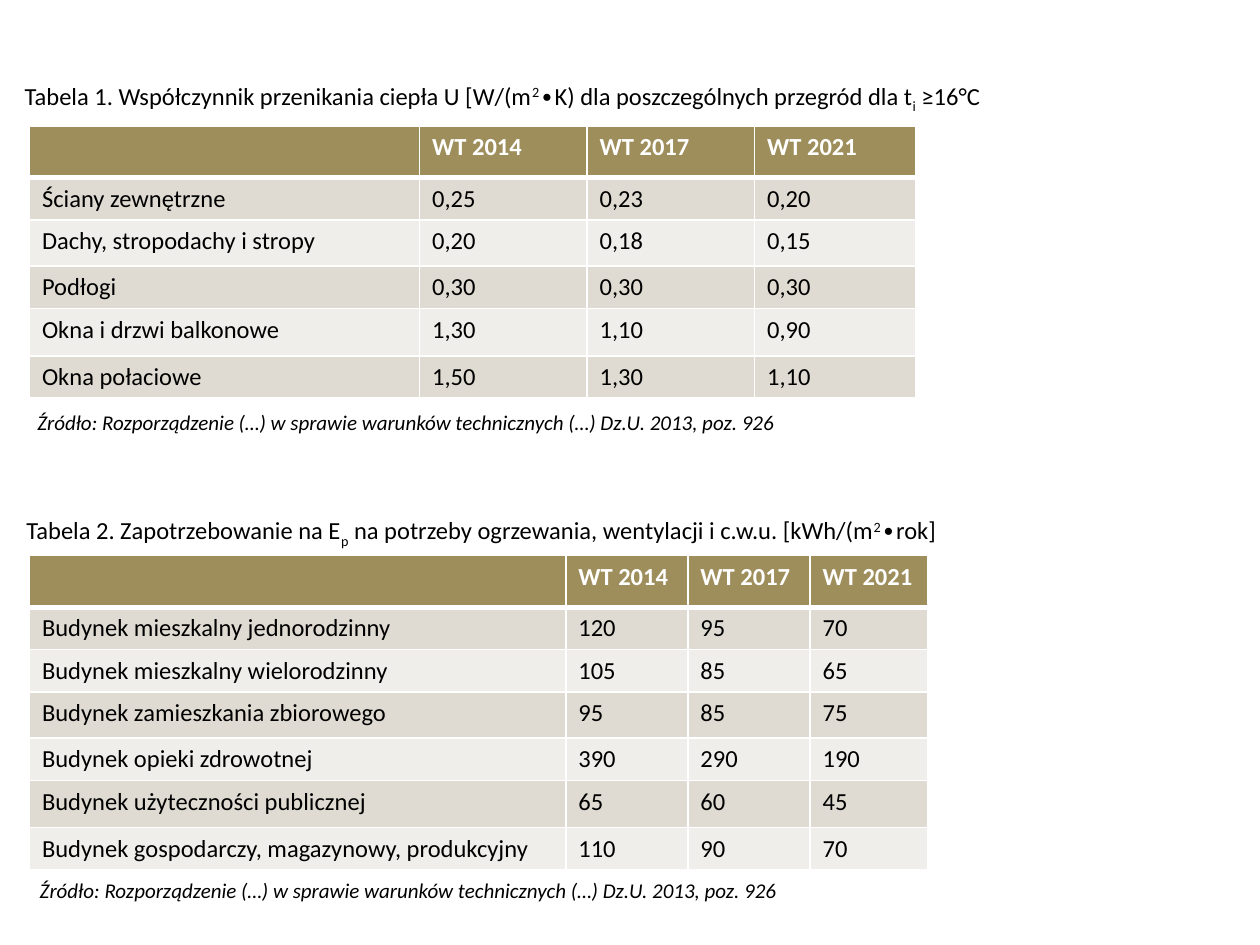
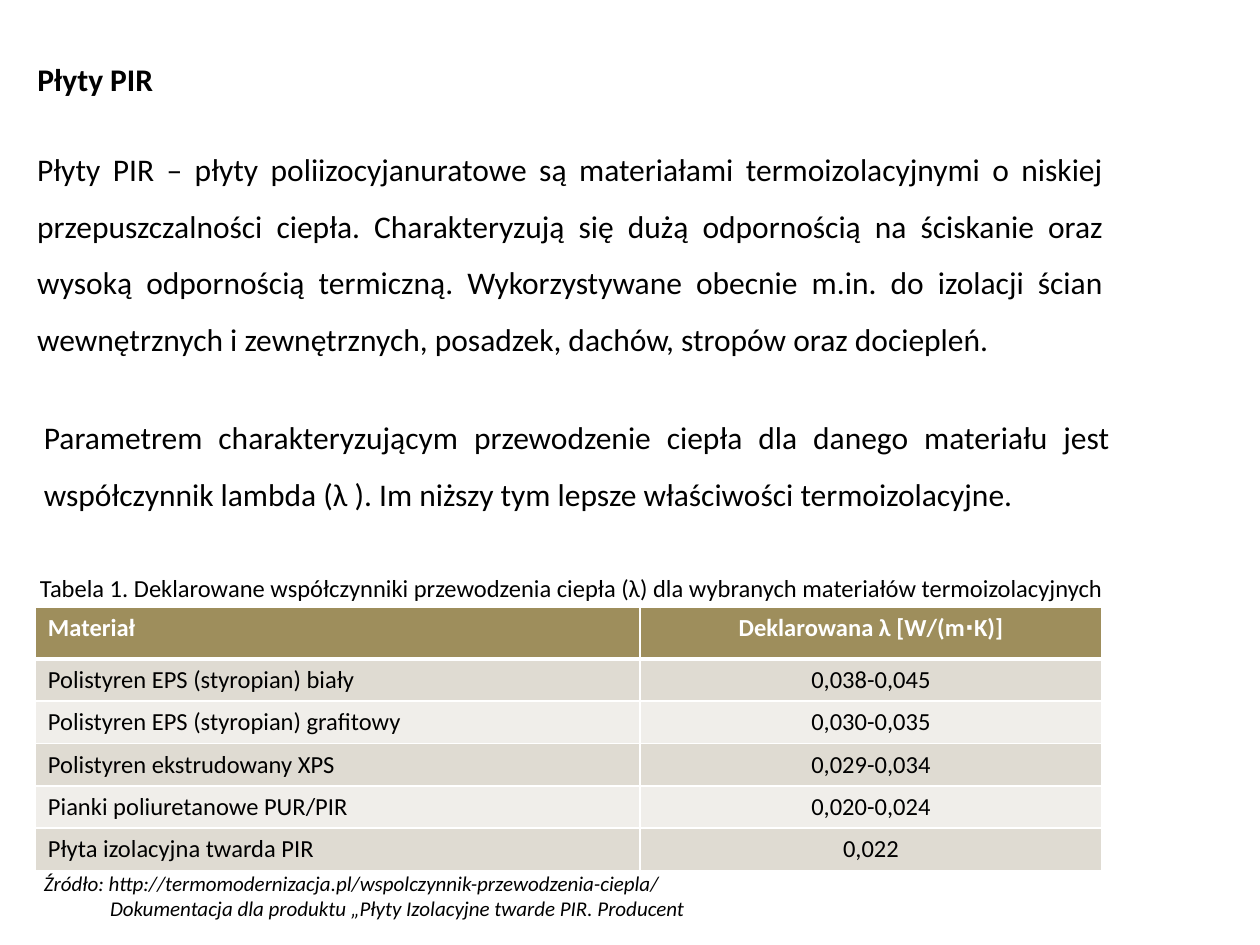
import dataclasses

import lxml.etree
import pptx
import pptx.dml.color
import pptx.enum.text
import pptx.oxml.ns
import pptx.util

Pt = pptx.util.Pt
ALIGN = pptx.enum.text.PP_ALIGN
SUPERSCRIPT, SUBSCRIPT = 30, -25


@dataclasses.dataclass(frozen=True)
class Theme:
    font: str = "Calibri"
    text: str = "000000"
    paper: str = "FFFFFF"
    header: str = "9E8E5C"
    bands: tuple = ("DFDBD2", "F0EEEA")
    body_size: int = 18
    table_size: int = 14
    source_size: int = 12
    header_height: float = 29.5
    row_height: float = 24.2
    grid_line: float = 1
    header_line: float = 3


def color(code):
    return pptx.dml.color.RGBColor.from_string(code)


def write(paragraph, content, *, font, size, ink, bold=False, italic=False,
          align=None, line_spacing=None, indent=0):
    """Fill a paragraph from a string or a list of (text, baseline) pairs."""
    if indent:
        paragraph._p.get_or_add_pPr().set("marL", str(Pt(indent)))
    if align is not None:
        paragraph.alignment = align
    if line_spacing is not None:
        paragraph.line_spacing = line_spacing
    pieces = [(content, 0)] if isinstance(content, str) else content
    for text, baseline in pieces:
        if not text:
            continue
        run = paragraph.add_run()
        run.text = text
        run.font.name = font
        run.font.size = Pt(size)
        run.font.bold = bold
        run.font.italic = italic
        run.font.color.rgb = color(ink)
        if baseline:
            run._r.get_or_add_rPr().set("baseline", str(baseline * 1000))


def set_borders(cell, ink, widths):
    """Draw cell edges; widths maps the edge letters L, R, T, B to points."""
    properties = cell._tc.get_or_add_tcPr()
    qn = pptx.oxml.ns.qn
    for index, (edge, width) in enumerate(widths.items()):
        line = lxml.etree.Element(qn(f"a:ln{edge}"), w=str(Pt(width)))
        fill = lxml.etree.SubElement(line, qn("a:solidFill"))
        lxml.etree.SubElement(fill, qn("a:srgbClr"), val=ink)
        properties.insert(index, line)


class Deck:
    def __init__(self, theme):
        self.theme = theme
        self.presentation = pptx.Presentation()
        self.presentation.slide_width = Pt(720)
        self.presentation.slide_height = Pt(540)
        self.slide = None

    def new_slide(self):
        self.slide = self.presentation.slides.add_slide(
            self.presentation.slide_layouts[6])
        self.slide.background.fill.solid()
        self.slide.background.fill.fore_color.rgb = color(self.theme.paper)

    def text(self, left, top, width, height, *paragraphs, wrap=True,
             last_indent=0, **style):
        box = self.slide.shapes.add_textbox(
            Pt(left), Pt(top), Pt(width), Pt(height))
        frame = box.text_frame
        frame.word_wrap = wrap
        frame.auto_size = pptx.enum.text.MSO_AUTO_SIZE.SHAPE_TO_FIT_TEXT
        for index, content in enumerate(paragraphs):
            paragraph = frame.add_paragraph() if index else frame.paragraphs[0]
            write(paragraph, content, font=self.theme.font, ink=self.theme.text,
                  indent=last_indent if index else 0, **style)

    def heading(self, left, top, width, content):
        self.text(left, top, width, 29, content, wrap=False,
                  size=self.theme.body_size, bold=True)

    def body(self, left, top, height, content):
        self.text(left, top, 623.5, height, content, size=self.theme.body_size,
                  align=ALIGN.JUSTIFY, line_spacing=1.5)

    def caption(self, left, top, width, content):
        self.text(left, top, width, 24.5, content, size=self.theme.table_size)

    def source(self, left, top, height, *lines, last_indent=0):
        self.text(left, top, 516, height, *lines, last_indent=last_indent,
                  size=self.theme.source_size, italic=True)

    def table(self, left, top, column_widths, rows, tall_rows=None,
              value_align=None):
        """Add a banded table; tall_rows maps a row index to its height."""
        theme = self.theme
        heights = [theme.header_height] + [theme.row_height] * (len(rows) - 1)
        for index, height in (tall_rows or {}).items():
            heights[index] = height
        table = self.slide.shapes.add_table(
            len(rows), len(column_widths), Pt(left), Pt(top),
            Pt(sum(column_widths)), Pt(sum(heights))).table
        table.first_row = table.horz_banding = False
        for column, width in zip(table.columns, column_widths):
            column.width = Pt(width)
        for row_index, values in enumerate(rows):
            table.rows[row_index].height = Pt(heights[row_index])
            is_header = row_index == 0
            for column_index, value in enumerate(values):
                cell = table.cell(row_index, column_index)
                cell.fill.solid()
                cell.fill.fore_color.rgb = color(
                    theme.header if is_header else theme.bands[(row_index - 1) % 2])
                top_line = theme.header_line if row_index == 1 else theme.grid_line
                bottom_line = theme.header_line if is_header else theme.grid_line
                set_borders(cell, theme.paper, {
                    "L": theme.grid_line, "R": theme.grid_line,
                    "T": top_line, "B": bottom_line})
                write(cell.text_frame.paragraphs[0], value, font=theme.font,
                      size=theme.table_size, bold=is_header,
                      ink=theme.paper if is_header else theme.text,
                      align=value_align if column_index else None)


YEARS = ("", "WT 2014", "WT 2017", "WT 2021")
REGULATION = ("Źródło: Rozporządzenie (…) w sprawie warunków technicznych (…) "
              "Dz.U. 2013, poz. 926")


def add_requirements_slide(deck):
    deck.new_slide()
    deck.caption(7, 42.5, 585, [
        ("Tabela 1. Współczynnik przenikania ciepła U [W/(m", 0),
        ("2", SUPERSCRIPT), ("∙K) dla poszczególnych przegród dla t", 0),
        ("i", SUBSCRIPT), (" ≥16°C", 0)])
    deck.table(16.8, 72, (223, 95.7, 95.7, 92), [
        YEARS,
        ("Ściany zewnętrzne", "0,25", "0,23", "0,20"),
        ("Dachy, stropodachy i stropy", "0,20", "0,18", "0,15"),
        ("Podłogi", "0,30", "0,30", "0,30"),
        ("Okna i drzwi balkonowe", "1,30", "1,10", "0,90"),
        ("Okna połaciowe", "1,50", "1,30", "1,10"),
    ], tall_rows={2: 26.5, 4: 27})
    deck.source(14.2, 230.5, 21.8, REGULATION)

    deck.caption(8, 291, 712, [
        ("Tabela 2. Zapotrzebowanie na E", 0), ("p", SUBSCRIPT),
        (" na potrzeby ogrzewania, wentylacji i c.w.u. [kWh/(m", 0),
        ("2", SUPERSCRIPT), ("∙rok]", 0)])
    deck.table(16.8, 317.5, (306.5, 69.8, 69.8, 67.5), [
        YEARS,
        ("Budynek mieszkalny jednorodzinny", "120", "95", "70"),
        ("Budynek mieszkalny wielorodzinny", "105", "85", "65"),
        ("Budynek zamieszkania zbiorowego", "95", "85", "75"),
        ("Budynek opieki zdrowotnej", "390", "290", "190"),
        ("Budynek użyteczności publicznej", "65", "60", "45"),
        ("Budynek gospodarczy, magazynowy, produkcyjny", "110", "90", "70"),
    ], tall_rows={3: 26.5, 5: 27})
    deck.source(15.6, 498, 21.8, REGULATION)


def add_pir_boards_slide(deck):
    deck.new_slide()
    deck.heading(14.2, 31, 81.5, "Płyty PIR")
    deck.body(14.2, 71.3, 138, (
        "Płyty PIR – płyty poliizocyjanuratowe są materiałami termoizolacyjnymi "
        "o niskiej przepuszczalności ciepła. Charakteryzują się dużą odpornością "
        "na ściskanie oraz wysoką odpornością termiczną. Wykorzystywane obecnie "
        "m.in. do izolacji ścian wewnętrznych i zewnętrznych, posadzek, dachów, "
        "stropów oraz dociepleń."))
    deck.body(18, 224.6, 69, (
        "Parametrem charakteryzującym przewodzenie ciepła dla danego materiału "
        "jest współczynnik lambda (λ ). Im niższy tym lepsze właściwości "
        "termoizolacyjne."))
    deck.caption(15.8, 324, 623.5, (
        "Tabela 1. Deklarowane współczynniki przewodzenia ciepła (λ) "
        "dla wybranych materiałów termoizolacyjnych"))
    deck.table(20.2, 347, (345.5, 264), [
        ("Materiał", "Deklarowana λ [W/(m∙K)]"),
        ("Polistyren EPS (styropian) biały", "0,038-0,045"),
        ("Polistyren EPS (styropian) grafitowy", "0,030-0,035"),
        ("Polistyren ekstrudowany XPS", "0,029-0,034"),
        ("Pianki poliuretanowe PUR/PIR", "0,020-0,024"),
        ("Płyta izolacyjna twarda PIR", "0,022"),
    ], value_align=ALIGN.CENTER)
    deck.source(
        18, 494, 36,
        "Źródło: http://termomodernizacja.pl/wspolczynnik-przewodzenia-ciepla/",
        "Dokumentacja dla produktu „Płyty Izolacyjne twarde PIR. Producent",
        last_indent=37.8)


def main():
    deck = Deck(Theme())
    add_requirements_slide(deck)
    add_pir_boards_slide(deck)
    deck.presentation.save("out.pptx")


if __name__ == "__main__":
    main()
